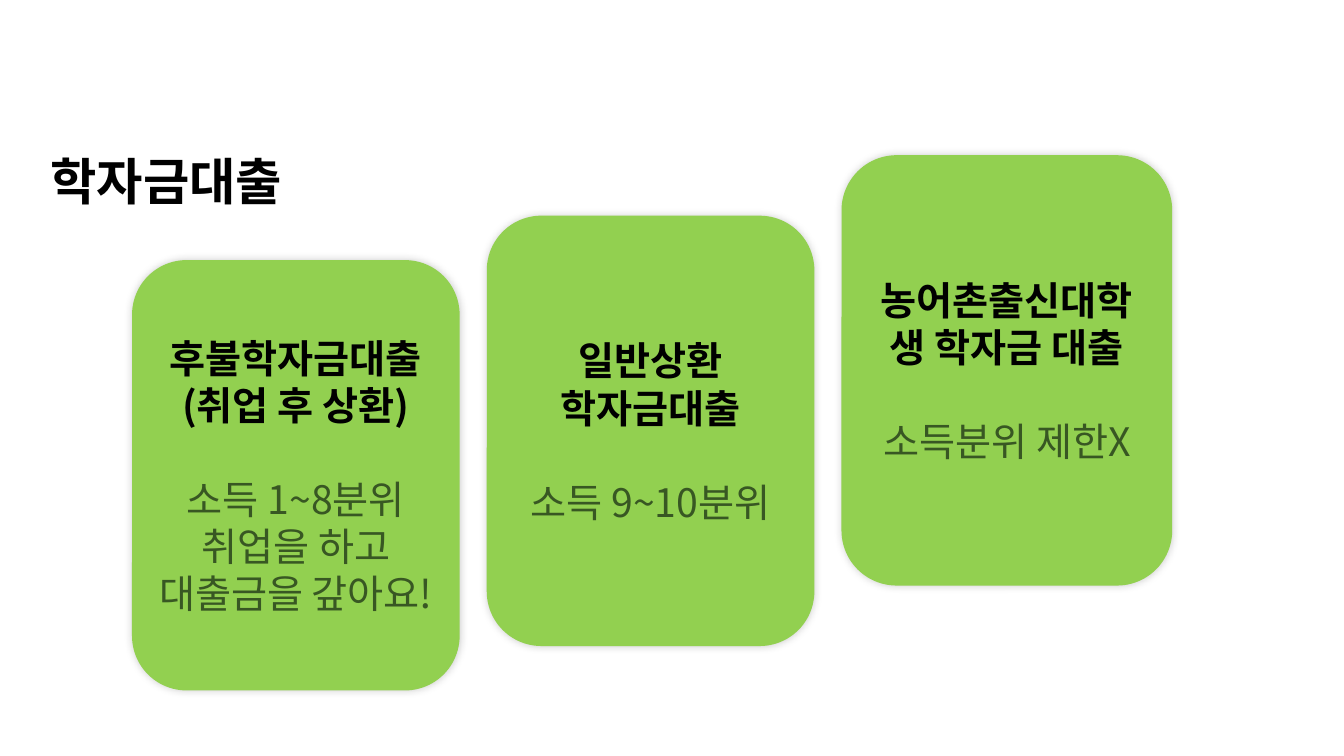
from lxml import etree
from pptx import Presentation
from pptx.dml.color import RGBColor
from pptx.enum.shapes import MSO_SHAPE
from pptx.enum.text import MSO_ANCHOR, MSO_AUTO_SIZE, PP_ALIGN
from pptx.oxml.ns import qn
from pptx.util import Pt

ROUNDED = MSO_SHAPE.ROUNDED_RECTANGLE
TOP, MIDDLE = MSO_ANCHOR.TOP, MSO_ANCHOR.MIDDLE
LEFT, CENTER = PP_ALIGN.LEFT, PP_ALIGN.CENTER
NO_AUTOFIT = MSO_AUTO_SIZE.NONE

FONT = "Noto Sans CJK KR"
BLACK, GREEN, DARK_GREEN = "000000", "92D050", "385723"

TITLE = "학자금대출"
LOANS = [
    {"name": ["후불학자금대출", "(취업 후 상환)"],
     "terms": ["소득 1~8분위", "취업을 하고", "대출금을 갚아요!"],
     "top": 185.8, "width": 234},
    {"name": ["일반상환", "학자금대출"],
     "terms": ["소득 9~10분위"],
     "top": 154.1, "width": 234},
    {"name": ["농어촌출신대학생 학자금 대출"],
     "terms": ["소득분위 제한X"],
     "top": 110.9, "width": 236.2},
]
CARD_LEFT, CARD_STEP, CARD_HEIGHT = 94.3, 253.4, 307.4
TERMS_GAP = 33.6


def color(value):
    return RGBColor.from_string(value)


def write(paragraph, text, size=28, fill=BLACK, bold=False, align=CENTER, before=0):
    paragraph.alignment = align
    paragraph.space_before = Pt(before)
    run = paragraph.add_run()
    run.text = text
    run.font.size = Pt(size)
    run.font.bold = bold
    run.font.name = FONT
    run.font.color.rgb = color(fill)
    latin = run.font._element.find(qn("a:latin"))
    east_asian = etree.Element(qn("a:ea"), typeface=FONT)
    latin.addnext(east_asian)


def add_soft_shadow(shape):
    shape.shadow.inherit = False
    effects = shape._element.spPr.find(qn("a:effectLst"))
    shadow = etree.SubElement(effects, qn("a:outerShdw"), blurRad=str(Pt(6)),
                              dist="0", dir=str(315 * 60000), rotWithShape="0")
    shade = etree.SubElement(shadow, qn("a:srgbClr"), val=BLACK)
    etree.SubElement(shade, qn("a:alpha"), val="20000")


def add_title(slide):
    title = slide.shapes.title
    title.left, title.top, title.width, title.height = Pt(28.8), Pt(103.7), Pt(497.5), Pt(51.1)
    frame = title.text_frame
    frame.word_wrap = True
    frame.auto_size = NO_AUTOFIT
    frame.vertical_anchor = TOP
    write(frame.paragraphs[0], TITLE, size=36, bold=True, align=LEFT)


def add_card(slide, index, loan):
    card = slide.shapes.add_shape(ROUNDED, Pt(CARD_LEFT + index * CARD_STEP), Pt(loan["top"]),
                                  Pt(loan["width"]), Pt(CARD_HEIGHT))
    card.fill.solid()
    card.fill.fore_color.rgb = color(GREEN)
    card.line.fill.background()
    add_soft_shadow(card)
    frame = card.text_frame
    frame.word_wrap = True
    frame.vertical_anchor = MIDDLE
    for position, text in enumerate(loan["name"]):
        paragraph = frame.add_paragraph() if position else frame.paragraphs[0]
        write(paragraph, text, bold=True)
    for position, text in enumerate(loan["terms"]):
        write(frame.add_paragraph(), text, fill=DARK_GREEN, before=0 if position else TERMS_GAP)


def main():
    presentation = Presentation()
    presentation.slide_width, presentation.slide_height = Pt(960), Pt(540)
    slide = presentation.slides.add_slide(presentation.slide_layouts[5])
    add_title(slide)
    for index, loan in enumerate(LOANS):
        add_card(slide, index, loan)
    presentation.save("out.pptx")


if __name__ == "__main__":
    main()
